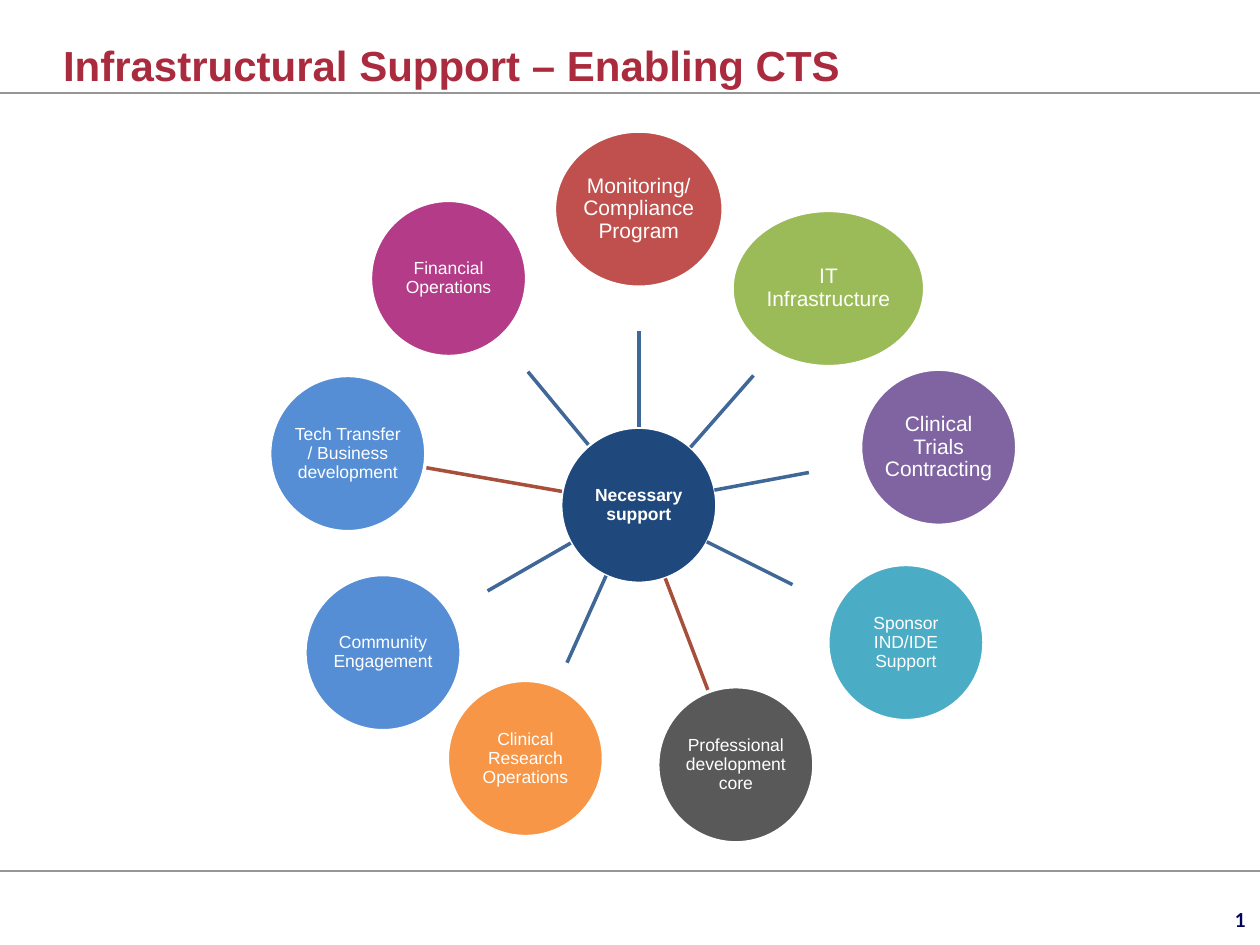
from pptx import Presentation
from pptx.dml.color import RGBColor
from pptx.enum.shapes import MSO_CONNECTOR, MSO_SHAPE
from pptx.enum.text import MSO_ANCHOR, MSO_AUTO_SIZE, PP_ALIGN
from pptx.oxml.ns import qn
from pptx.util import Inches, Pt

DIAMETER = 1.24
HUB = ("Necessary support", 4.45, 3.39, DIAMETER, "1F497D", 10)
SATELLITES = [
    ("Monitoring/ Compliance Program", 4.4, 1.04, 1.34, "C0504D", 12),
    ("IT Infrastructure", 5.81, 1.67, 1.53, "9BBB59", 12),
    ("Clinical Trials Contracting", 6.83, 2.93, DIAMETER, "8064A2", 12),
    ("Sponsor IND/IDE Support", 6.57, 4.48, DIAMETER, "4BACC6", 10),
    ("Professional development core", 5.22, 5.45, DIAMETER, "595959", 10),
    ("Clinical Research Operations", 3.55, 5.4, DIAMETER, "F79646", 10),
    ("Community Engagement", 2.42, 4.56, DIAMETER, "558ED5", 10),
    ("Tech Transfer / Business development", 2.14, 2.98, DIAMETER, "558ED5", 10),
    ("Financial Operations", 2.94, 1.59, DIAMETER, "B33B88", 10),
]
BLUE, RED = "3F6797", "A74F3A"
SPOKES = [
    (5.07, 3.39, 5.07, 2.63, BLUE),
    (5.48, 3.55, 5.98, 2.98, BLUE),
    (5.67, 3.89, 6.42, 3.75, BLUE),
    (5.61, 4.3, 6.29, 4.64, BLUE),
    (5.28, 4.59, 5.62, 5.48, RED),
    (4.81, 4.57, 4.5, 5.26, BLUE),
    (4.53, 4.31, 3.87, 4.69, BLUE),
    (4.46, 3.9, 3.37, 3.71, RED),
    (4.67, 3.53, 4.19, 2.95, BLUE),
]


def rgb(value):
    return RGBColor.from_string(value)


def set_all(target, values):
    for name, value in values.items():
        setattr(target, name, value)


def write(tf, text, align, anchor, size, color, font="Arial", bold=False,
          inset=0, wrap=True, spacing=None):
    margins = {f"margin_{side}": Inches(inset)
               for side in ("left", "top", "right", "bottom")}
    set_all(tf, {"auto_size": MSO_AUTO_SIZE.NONE, "word_wrap": wrap,
                 "vertical_anchor": anchor, **margins})
    p = tf.paragraphs[0]
    set_all(p, {"alignment": align, "line_spacing": spacing})
    r = p.add_run()
    r.text = text
    set_all(r.font, {"name": font, "size": Pt(size), "bold": bold})
    r.font.color.rgb = rgb(color)


def add_title(s, text):
    title = s.shapes.title
    set_all(title, {"left": Inches(0.5), "top": Inches(0.1),
                    "width": Inches(9.32), "height": Inches(0.61)})
    write(title.text_frame, text, PP_ALIGN.LEFT, MSO_ANCHOR.BOTTOM,
          24, "AA2B3E", bold=True)


def add_line(s, x1, y1, x2, y2, color, width):
    line = s.shapes.add_connector(MSO_CONNECTOR.STRAIGHT, Inches(x1),
                                  Inches(y1), Inches(x2), Inches(y2))
    line.line.color.rgb = rgb(color)
    line.line.width = Pt(width)
    spPr = line._element.spPr
    spPr.append(spPr.makeelement(qn("a:effectLst"), {}))


def add_circle(s, text, left, top, width, color, size, bold=False):
    sp = s.shapes.add_shape(MSO_SHAPE.OVAL, Inches(left), Inches(top),
                            Inches(width), Inches(DIAMETER))
    sp.shadow.inherit = False
    sp.fill.solid()
    sp.fill.fore_color.rgb = rgb(color)
    sp.line.color.rgb = rgb("FFFFFF")
    sp.line.width = Pt(2)
    write(sp.text_frame, text, PP_ALIGN.CENTER, MSO_ANCHOR.MIDDLE, size,
          "FFFFFF", bold=bold, inset=0.01, spacing=0.9)


def add_page_number(s, text):
    box = s.shapes.add_textbox(Inches(9.73), Inches(7.21),
                               Inches(0.16), Inches(0.18))
    write(box.text_frame, text, PP_ALIGN.RIGHT, MSO_ANCHOR.BOTTOM, 11,
          "000458", font="Lato", bold=True, wrap=False)


def main():
    prs = Presentation()
    prs.slide_width, prs.slide_height = Inches(10), Inches(7.5)
    s = prs.slides.add_slide(prs.slide_layouts[5])
    add_page_number(s, "1")
    for y in (6.91, 0.74):
        add_line(s, 0, y, 10, y, "969696", 1)
    add_circle(s, *HUB, bold=True)
    for spoke, satellite in zip(SPOKES, SATELLITES):
        add_line(s, *spoke, 2)
        add_circle(s, *satellite)
    add_title(s, "Infrastructural Support – Enabling CTS")
    prs.save("out.pptx")


if __name__ == "__main__":
    main()
